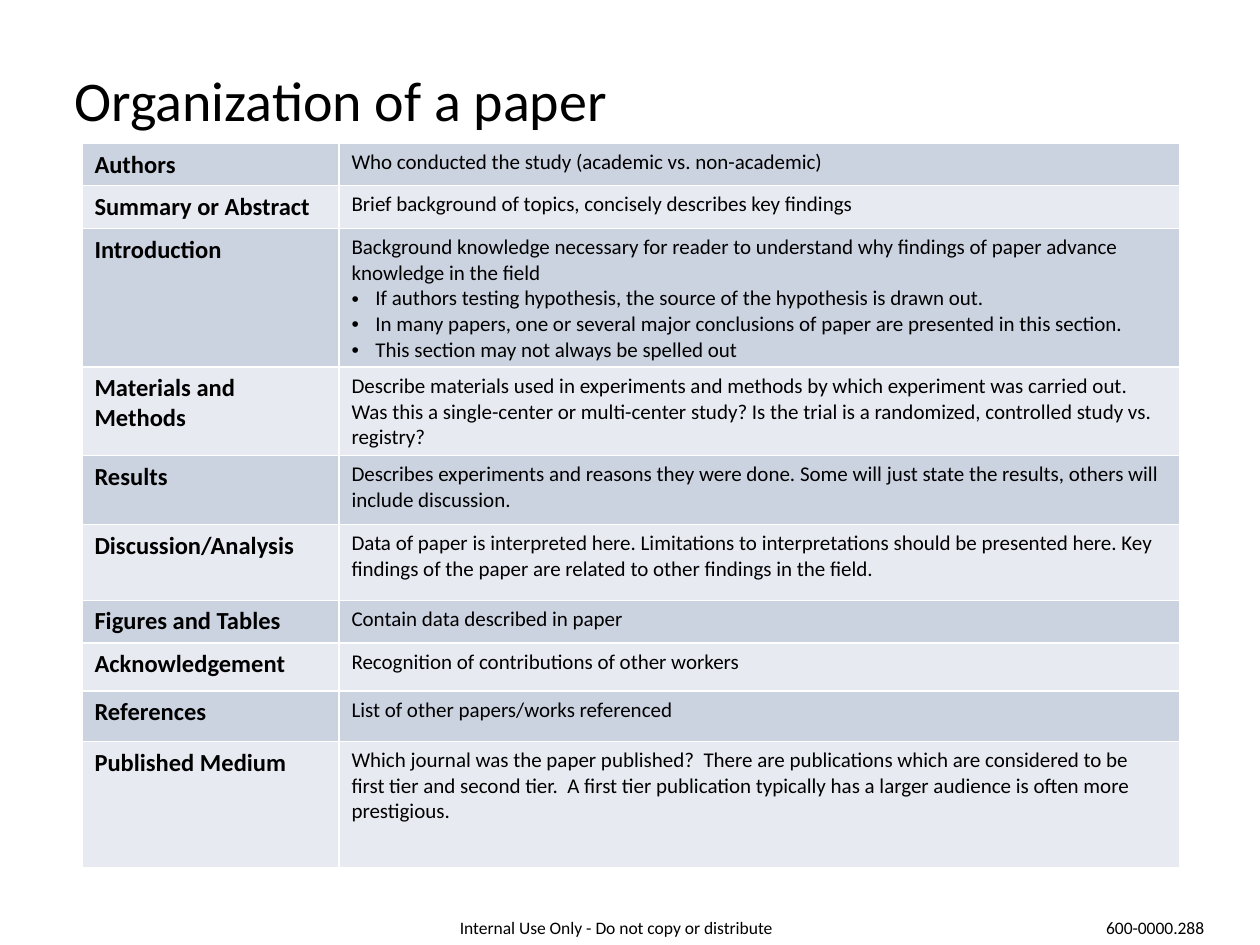
from lxml import etree
from pptx import Presentation
from pptx import util as u
from pptx.dml.color import RGBColor
from pptx.enum import text
from pptx.oxml.ns import qn

FONT = "Calibri"
BLACK, WHITE = "000000", "FFFFFF"
BANDS = ("CCD3E0", "E7EAF0")
HEAD = {"size": u.Pt(14), "bold": True}
BODY = {"size": u.Pt(12), "bold": False}

# Text boxes: wording, (left, top, width, height), size, insets (left, top, right, bottom)
BOXES = [
    ("Internal Use Only - Do not copy or distribute",
     (3.65, 7.28, 2.6, 0.25), 10, (0, 0, 0, 0)),
    ("Organization of a paper",
     (0.59, 0.49, 8.82, 1.1), 32, (0, 0.03, 0, 0)),
    ("600-0000.288",
     (8.68, 7.23, 1.15, 0.25), 10, (0.1, 0.05, 0.1, 0.05)),
]

# Table rows: height, section, description, bullets
COLS = (2.04, 6.67)
ROWS = [
    (0.33, "Authors", "Who conducted the study (academic vs. non-academic)", []),
    (0.34, "Summary or Abstract",
     "Brief background of topics, concisely describes key findings", []),
    (1.1, "Introduction",
     "Background knowledge necessary for reader to understand why findings of "
     "paper advance knowledge in the field",
     ["If authors testing hypothesis, the source of the hypothesis is drawn out.",
      "In many papers, one or several major conclusions of paper are presented "
      "in this section.",
      "This section may not always be spelled out"]),
    (0.7, "Materials and Methods",
     "Describe materials used in experiments and methods by which experiment was "
     "carried out. Was this a single-center or multi-center study? Is the trial is "
     "a randomized, controlled study vs. registry?", []),
    (0.55, "Results",
     "Describes experiments and reasons they were done. Some will just state the "
     "results, others will include discussion.", []),
    (0.6, "Discussion/Analysis",
     "Data of paper is interpreted here. Limitations to interpretations should be "
     "presented here. Key findings of the paper are related to other findings in "
     "the field.", []),
    (0.34, "Figures and Tables", "Contain data described in paper", []),
    (0.38, "Acknowledgement", "Recognition of contributions of other workers", []),
    (0.4, "References", "List of other papers/works referenced", []),
    (1, "Published Medium",
     "Which journal was the paper published?  There are publications which are "
     "considered to be first tier and second tier.  A first tier publication "
     "typically has a larger audience is often more prestigious.", []),
]


def rgb(color):
    return RGBColor.from_string(color)


def write(p, words, **fmt):
    r = p.add_run()
    r.text = words
    for name, value in {"name": FONT, **fmt}.items():
        setattr(r.font, name, value)
    r.font.color.rgb = rgb(BLACK)


def add_bullet(p):
    pPr = p._p.get_or_add_pPr()
    pPr.set("marL", str(u.Inches(0.19)))
    pPr.set("indent", str(u.Inches(-0.19)))
    etree.SubElement(pPr, qn("a:buFont"), typeface="Arial")
    etree.SubElement(pPr, qn("a:buChar"), char="•")


def format_cell(cell, color):
    tcPr = cell._tc.get_or_add_tcPr()
    for side in ("lnL", "lnR", "lnT", "lnB"):
        ln = etree.SubElement(tcPr, qn(f"a:{side}"), w=str(u.Pt(1)))
        fill = etree.SubElement(ln, qn("a:solidFill"))
        etree.SubElement(fill, qn("a:srgbClr"), val=WHITE)
    cell.fill.solid()
    cell.fill.fore_color.rgb = rgb(color)


prs = Presentation()
prs.slide_width, prs.slide_height = u.Inches(10), u.Inches(7.5)
s = prs.slides.add_slide(prs.slide_layouts[6])

# Title and footer
for words, place, size, insets in BOXES:
    tf = s.shapes.add_textbox(*map(u.Inches, place)).text_frame
    tf.word_wrap = True
    tf.vertical_anchor = text.MSO_ANCHOR.TOP
    for side, inset in zip(("left", "top", "right", "bottom"), insets):
        setattr(tf, f"margin_{side}", u.Inches(inset))
    write(tf.paragraphs[0], words, size=u.Pt(size))

# Table of paper sections
height = sum(row[0] for row in ROWS)
table = s.shapes.add_table(
    len(ROWS), len(COLS), u.Inches(0.65), u.Inches(1.14),
    u.Inches(sum(COLS)), u.Inches(height)).table
table.first_row = False
table.horz_banding = False
for col, width in zip(table.columns, COLS):
    col.width = u.Inches(width)
for i, (row_height, section, description, bullets) in enumerate(ROWS):
    table.rows[i].height = u.Inches(row_height)
    head, body = table.rows[i].cells
    for cell in (head, body):
        format_cell(cell, BANDS[i % 2])
    write(head.text_frame.paragraphs[0], section, **HEAD)
    write(body.text_frame.paragraphs[0], description, **BODY)
    for bullet in bullets:
        p = body.text_frame.add_paragraph()
        add_bullet(p)
        write(p, bullet, **BODY)

prs.save("out.pptx")
